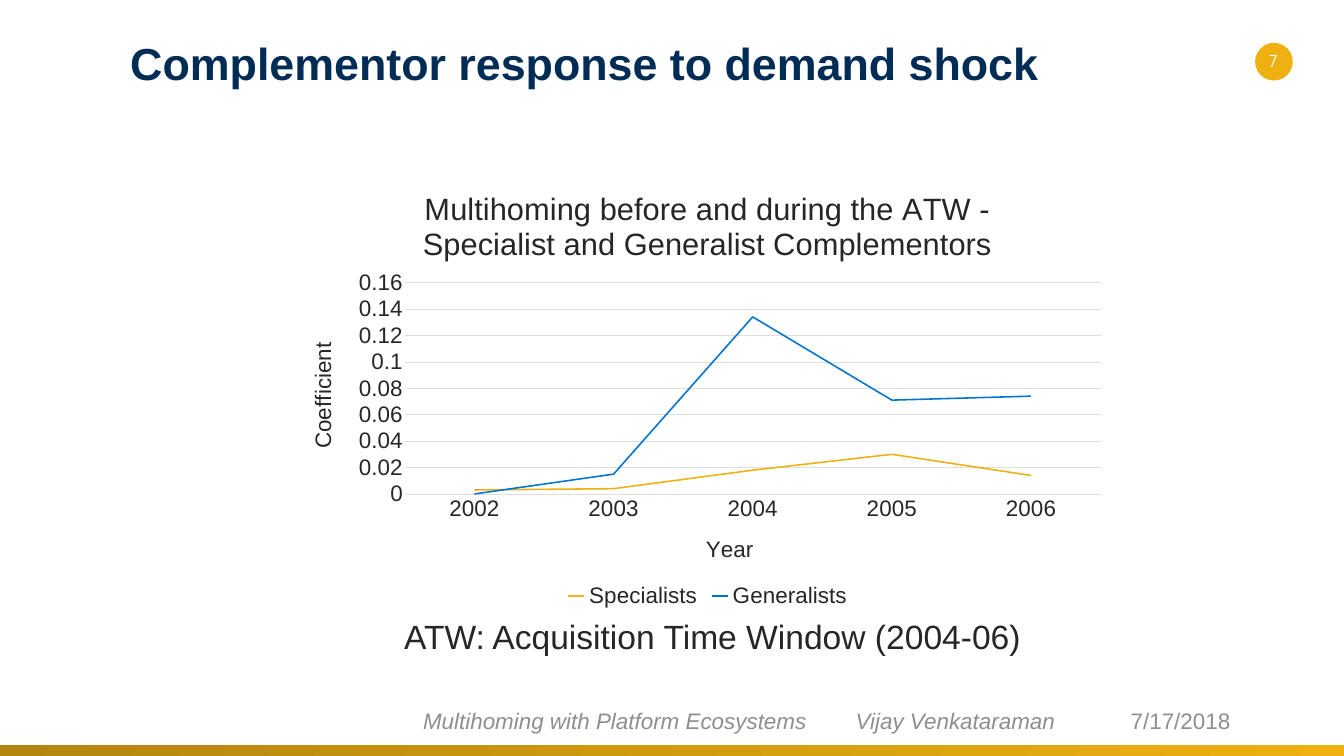
from lxml import etree
from pptx import Presentation
from pptx.chart.data import CategoryChartData
from pptx.dml.color import RGBColor
from pptx.enum.chart import XL_CHART_TYPE, XL_LEGEND_POSITION, XL_MARKER_STYLE, XL_TICK_MARK
from pptx.enum.shapes import MSO_SHAPE
from pptx.enum.text import MSO_ANCHOR, PP_ALIGN
from pptx.oxml import parse_xml
from pptx.oxml.ns import nsdecls, qn
from pptx.util import Cm, Pt

LINE, BOTTOM = XL_CHART_TYPE.LINE, XL_LEGEND_POSITION.BOTTOM
NO_MARKER, NO_TICK = XL_MARKER_STYLE.NONE, XL_TICK_MARK.NONE
OVAL, RECT = MSO_SHAPE.OVAL, MSO_SHAPE.RECTANGLE
TOP, MIDDLE = MSO_ANCHOR.TOP, MSO_ANCHOR.MIDDLE
LEFT, CENTER = PP_ALIGN.LEFT, PP_ALIGN.CENTER

WHITE = RGBColor(0xFF, 0xFF, 0xFF)
NAVY = RGBColor(0x00, 0x2C, 0x56)
GOLD = RGBColor(0xEE, 0xB1, 0x11)
DARK_GOLD = RGBColor(0xB2, 0x85, 0x0D)
BLUE = RGBColor(0x00, 0x74, 0xD1)
INK = RGBColor(0x26, 0x26, 0x26)
GRAY = RGBColor(0x8E, 0x8E, 0x8E)
GRID = RGBColor(0xDE, 0xDE, 0xDE)


class SlideBuilder:
    font = "Arial"
    roomy = (0.69, 0.33)
    tight = (0.25, 0.13)

    def __init__(self, slide):
        self.s = slide

    def style(self, font, size, color, **extra):
        for name, value in {"name": self.font, "size": Pt(size), "bold": False, **extra}.items():
            setattr(font, name, value)
        font.color.rgb = color

    def fill_text(self, sp, text, size, color, inset, anchor=TOP, align=LEFT, tab=None, **extra):
        tf = sp.text_frame
        x, y = map(Cm, inset)
        frame = {"word_wrap": True, "vertical_anchor": anchor, "margin_left": x,
                 "margin_right": x, "margin_top": y, "margin_bottom": y}
        for name, value in frame.items():
            setattr(tf, name, value)
        p = tf.paragraphs[0]
        p.alignment = align
        if tab:
            tabs = etree.SubElement(p._p.get_or_add_pPr(), qn("a:tabLst"))
            etree.SubElement(tabs, qn("a:tab"), pos=str(Cm(tab)), algn="l")
        r = p.add_run()
        r.text = text
        self.style(r.font, size, color, **extra)

    def title(self, box, text, size, color):
        sp = self.s.shapes.title
        sp.left, sp.top, sp.width, sp.height = map(Cm, box)
        self.fill_text(sp, text, size, color, self.roomy, bold=True)

    def text(self, box, text, size, color, inset=tight, **options):
        sp = self.s.shapes.add_textbox(*map(Cm, box))
        self.fill_text(sp, text, size, color, inset, **options)

    def shape(self, kind, box, *colors):
        sp = self.s.shapes.add_shape(kind, *map(Cm, box))
        sp.shadow.inherit = False
        sp.line.fill.background()
        if len(colors) == 1:
            sp.fill.solid()
            sp.fill.fore_color.rgb = colors[0]
        else:
            sp.fill.gradient()
            sp.fill.gradient_angle = 0
            for stop, color in zip(sp.fill.gradient_stops, colors):
                stop.color.rgb = color

    def chart_title(self, owner, text, size):
        tf = owner.text_frame
        tf.text = text
        self.style(tf.paragraphs[0].runs[0].font, size, INK)

    def axis(self, axis, title):
        axis.major_tick_mark = axis.minor_tick_mark = NO_TICK
        self.style(axis.tick_labels.font, 32, INK)
        self.chart_title(axis.axis_title, title, 32)

    def rule(self, line):
        line.color.rgb = GRID
        line.width = Pt(0.75)

    def line_chart(self, box, title, categories, series, plot_box):
        data = CategoryChartData()
        data.categories = categories
        for name, values, _ in series:
            data.add_series(name, values)
        chart = self.s.shapes.add_chart(LINE, *map(Cm, box), data).chart
        self.style(chart.font, 32, INK)
        self.chart_title(chart.chart_title, title, 44)
        chart.chart_title.include_in_layout = False
        chart.has_legend = True
        chart.legend.position = BOTTOM
        chart.legend.include_in_layout = False
        self.style(chart.legend.font, 32, INK)

        # Axes
        years, coefficients = chart.category_axis, chart.value_axis
        self.axis(years, "Year")
        self.axis(coefficients, "Coefficient")
        self.rule(years.format.line)
        self.rule(coefficients.major_gridlines.format.line)
        coefficients.format.line.fill.background()
        coefficients.minimum_scale, coefficients.maximum_scale = 0, 0.16
        coefficients.major_unit = 0.02

        # Series
        chart.plots[0].vary_by_categories = False
        for line, (_, _, color) in zip(chart.plots[0].series, series):
            line.smooth = False
            line.marker.style = NO_MARKER
            line.format.line.color.rgb = color
            line.format.line.width = Pt(2.25)

        # Inner plot area, as fractions of the chart
        places = "".join(f'<c:{k} val="{v}"/>' for k, v in zip("xywh", plot_box))
        layout = parse_xml(
            f'<c:layout {nsdecls("c")}><c:manualLayout><c:layoutTarget val="inner"/>'
            f'<c:xMode val="edge"/><c:yMode val="edge"/>{places}</c:manualLayout></c:layout>')
        area = chart._chartSpace.chart.plotArea
        for old in area.findall(qn("c:layout")):
            area.remove(old)
        area.insert(0, layout)


def main():
    prs = Presentation()
    prs.slide_width, prs.slide_height = Cm(67.73), Cm(38.1)
    b = SlideBuilder(prs.slides.add_slide(prs.slide_layouts[5]))

    # Page badge and bottom band
    b.shape(OVAL, (63.25, 2.16, 1.9, 1.9), GOLD)
    b.shape(RECT, (0, 37.57, 67.73, 0.97), DARK_GOLD, GOLD)
    b.text((62.69, 2.41, 2.97, 2.03), "7", 24, WHITE, align=CENTER, name="Manrope")

    # Title
    b.title((5.87, 1.45, 53.98, 4.06), "Complementor response to demand shock", 64, NAVY)

    # Chart and its note
    b.line_chart(
        (15.04, 8.69, 41.25, 22.2),
        "Multihoming before and during the ATW - Specialist and Generalist Complementors",
        ["2002", "2003", "2004", "2005", "2006"],
        [("Specialists", (0.003, 0.004, 0.018, 0.03, 0.014), GOLD),
         ("Generalists", (0, 0.015, 0.134, 0.071, 0.074), BLUE)],
        (0.13, 0.25, 0.85, 0.48))
    b.text((20.12, 30.91, 43.82, 2.31), "ATW: Acquisition Time Window (2004-06)", 48, INK)

    # Footer
    b.text((19.69, 35.2, 35.18, 2.24), "Multihoming with Platform Ecosystems\tVijay Venkataraman",
           32, GRAY, inset=(1.63, 0.33), anchor=MIDDLE, tab=21.8, italic=True)
    b.text((56.29, 35.31, 8.08, 2.03), "7/17/2018", 32, GRAY, inset=b.roomy, anchor=MIDDLE)

    prs.save("out.pptx")


if __name__ == "__main__":
    main()
